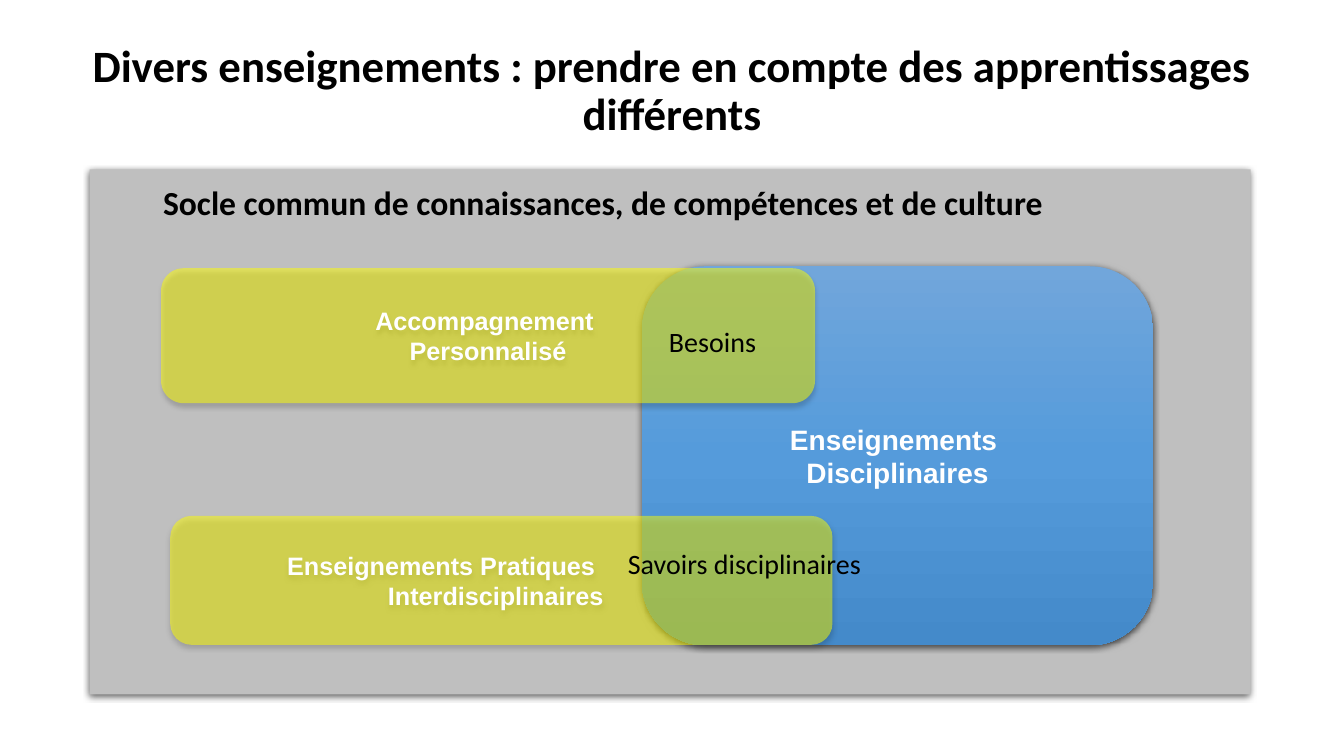
"""Slide on the kinds of teaching within the common core."""
from copy import deepcopy

from lxml import etree
from pptx import Presentation
from pptx.dml.color import RGBColor
from pptx.enum.shapes import MSO_SHAPE
from pptx.enum.text import MSO_ANCHOR, MSO_AUTO_SIZE, PP_ALIGN
from pptx.oxml.ns import qn
from pptx.util import Cm, Pt

RECTANGLE, ROUNDED = MSO_SHAPE.RECTANGLE, MSO_SHAPE.ROUNDED_RECTANGLE
TOP, MIDDLE = MSO_ANCHOR.TOP, MSO_ANCHOR.MIDDLE
LEFT, CENTER = PP_ALIGN.LEFT, PP_ALIGN.CENTER
NO_AUTOFIT = MSO_AUTO_SIZE.NONE
COLORS = {"black": "000000", "white": "FFFFFF", "gray": "BFBFBF", "yellow": "FFFF00",
          "blue_top": "71A6DB", "blue_middle": "559BDB", "blue_bottom": "448ACA"}


def write_text(shape, *lines, size=20, font="Calibri", color="black", bold=False,
               align=LEFT, anchor=TOP, spacing=None, indents=(0, 0)):
    """Fill a shape with one formatted paragraph per line."""
    frame = shape.text_frame
    frame.word_wrap = True
    frame.auto_size = NO_AUTOFIT
    frame.vertical_anchor = anchor
    frame.text = "\n".join(lines)
    for paragraph, indent in zip(frame.paragraphs, indents):
        paragraph.alignment = align
        paragraph.line_spacing = spacing
        if indent:
            paragraph._p.get_or_add_pPr().set("marL", str(Cm(indent)))
        style = paragraph.runs[0].font
        style.name, style.size, style.bold = font, Pt(size), bold
        style.color.rgb = RGBColor.from_string(COLORS[color])


def add_panel(kind, box, color, opacity=100, blur=4.5, distance=1.5, shade=63):
    """Add a borderless filled shape with a shadow cast downwards."""
    panel = slide.shapes.add_shape(kind, *map(Cm, box))
    panel.fill.solid()
    panel.fill.fore_color.rgb = RGBColor.from_string(COLORS[color])
    panel.line.fill.background()
    panel.shadow.inherit = False
    properties = panel._element.spPr
    if opacity < 100:
        tint = properties.find(qn("a:solidFill"))[0]
        etree.SubElement(tint, qn("a:alpha"), val=str(opacity * 1000))
    shadow = etree.SubElement(
        properties.find(qn("a:effectLst")), qn("a:outerShdw"), blurRad=str(Pt(blur)),
        dist=str(Pt(distance)), dir="5400000", algn="ctr", rotWithShape="0")
    shadow_color = etree.SubElement(shadow, qn("a:srgbClr"), val=COLORS["black"])
    etree.SubElement(shadow_color, qn("a:alpha"), val=str(shade * 1000))
    return panel


presentation = Presentation()
presentation.slide_width, presentation.slide_height = Cm(33.87), Cm(19.05)
slide = presentation.slides.add_slide(presentation.slide_layouts[5])

title = slide.shapes.title
title.left, title.top, title.width, title.height = Cm(0), Cm(0.97), Cm(33.87), Cm(2.31)
write_text(title, "Divers enseignements : prendre en compte des apprentissages différents",
           size=32, bold=True, align=CENTER, spacing=0.9)

add_panel(RECTANGLE, (2.26, 4.27, 29.26, 13.23), "gray")

disciplines = add_panel(ROUNDED, (16.18, 6.71, 12.88, 9.55), "blue_middle")
disciplines.fill.gradient()
disciplines.fill.gradient_angle = 270
stops = disciplines._element.spPr.find(qn("a:gradFill")).find(qn("a:gsLst"))
stops.insert(1, deepcopy(stops[0]))
for stop, position, shade_name in zip(disciplines.fill.gradient_stops, (0, 0.5, 1),
                                      ("blue_top", "blue_middle", "blue_bottom")):
    stop.position = position
    stop.color.rgb = RGBColor.from_string(COLORS[shade_name])
write_text(disciplines, "Enseignements ", "Disciplinaires", font="Arial",
           color="white", bold=True, align=CENTER, anchor=MIDDLE)

for box, lines, align, indents in (
    ((4.29, 13, 16.69, 3.25), ("Enseignements Pratiques", "Interdisciplinaires"),
     LEFT, (2.54, 5.08)),
    ((4.06, 6.76, 16.48, 3.4), ("Accompagnement ", "Personnalisé"), CENTER, (0, 0)),
):
    support = add_panel(ROUNDED, box, "yellow", opacity=50, blur=3.5, distance=2.2, shade=32)
    write_text(support, *lines, size=18, font="Arial", color="white", bold=True,
               align=align, anchor=MIDDLE, indents=indents)

for box, label, style in (
    ((15.57, 13.64, 6.38, 1.96), "Savoirs disciplinaires", {"align": CENTER}),
    ((16.61, 8.05, 4.27, 1.09), "Besoins", {}),
    ((3.86, 4.47, 26.75, 1.27), "Socle commun de connaissances, de compétences et de culture",
     {"size": 24, "bold": True}),
):
    write_text(slide.shapes.add_textbox(*map(Cm, box)), label, **style)

presentation.save("out.pptx")
